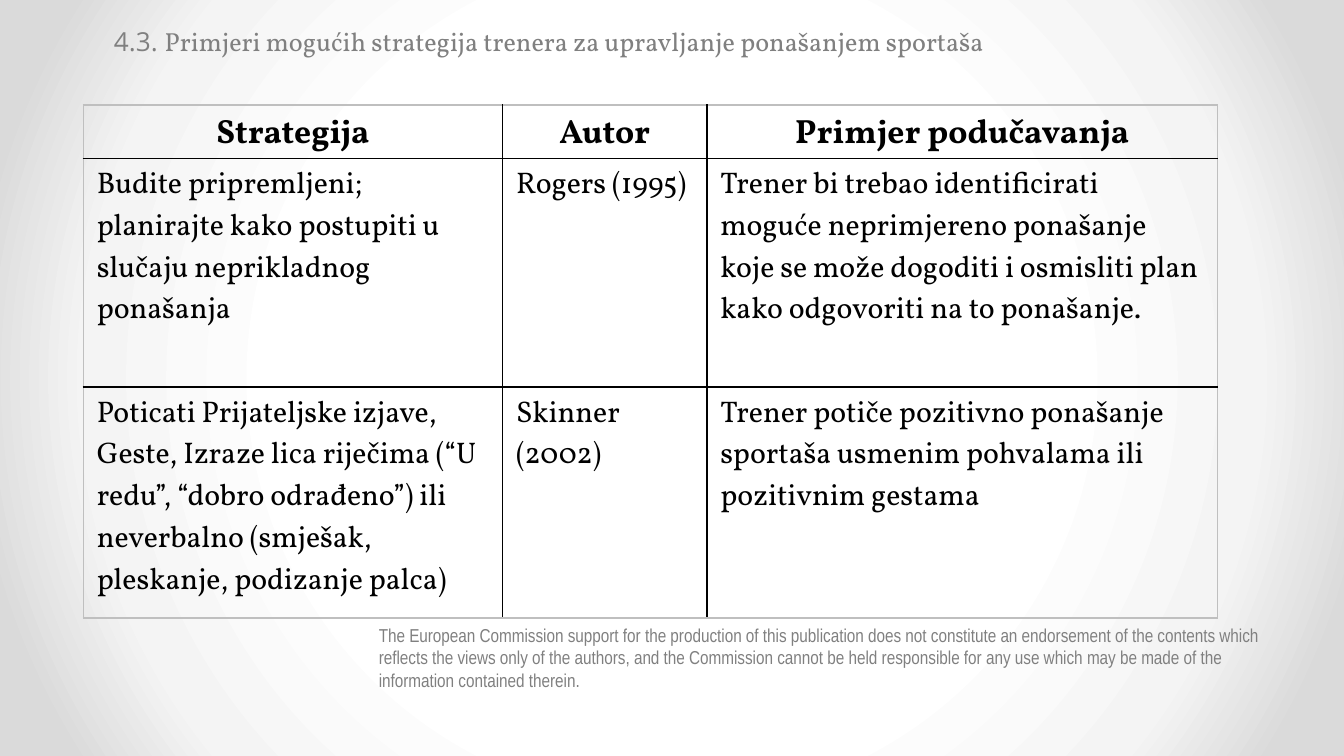
from lxml import etree
from pptx import Presentation
from pptx.dml.color import RGBColor
from pptx.enum.text import PP_ALIGN
from pptx.oxml import parse_xml
from pptx.oxml.ns import qn
from pptx.util import Inches, Pt

CENTER, LEFT = PP_ALIGN.CENTER, PP_ALIGN.LEFT
BLACK, GRAY, FRAME = "000000", "808080", "BFBFBF"
SERIF = "Vollkorn"
NS = ('xmlns:a="http://schemas.openxmlformats.org/drawingml/2006/main" '
      'xmlns:p="http://schemas.openxmlformats.org/presentationml/2006/main"')


def add_run(p, text, color, **fmt):
    r = p.add_run()
    r.text = text
    r.font.color.rgb = RGBColor.from_string(color)
    for name, value in fmt.items():
        setattr(r.font, name, value)


def add_border(cell, side, color):
    """Draw one edge of a cell; side is L, R, T or B."""
    ln = etree.SubElement(cell._tc.get_or_add_tcPr(), qn(f"a:ln{side}"), w=str(Pt(1)))
    fill = etree.SubElement(ln, qn("a:solidFill"))
    etree.SubElement(fill, qn("a:srgbClr"), val=color)


prs = Presentation()
prs.slide_width = Inches(10)
prs.slide_height = Inches(10) * 9 // 16
s = prs.slides.add_slide(prs.slide_layouts[6])

# Background: white centre fading to gray
stops = "".join(f'<a:gs pos="{pos * 1000}"><a:srgbClr val="{color}"/></a:gs>'
                for pos, color in [(50, "FFFFFF"), (76, "F4F4F4"), (92, "DADADA")])
bg = parse_xml(
    f'<p:bg {NS}><p:bgPr><a:gradFill rotWithShape="1"><a:gsLst>{stops}</a:gsLst>'
    '<a:path path="circle"><a:fillToRect l="50000" t="50000" r="50000" b="50000"/></a:path>'
    '</a:gradFill><a:effectLst/></p:bgPr></p:bg>')
s.shapes._spTree.addprevious(bg)

# Disclaimer
tf = s.shapes.add_textbox(Inches(2.72), Inches(4.59), Inches(6.93), Inches(0.67)).text_frame
tf.word_wrap = True
add_run(tf.paragraphs[0],
        "The European Commission support for the production of this publication does not "
        "constitute an endorsement of the contents which reflects the views only of the authors, "
        "and the Commission cannot be held responsible for any use which may be made of the "
        "information contained therein.",
        GRAY, size=Pt(10), name="Arial Narrow")

# Strategy table
rows = [
    ("Strategija", "Autor", "Primjer podučavanja"),
    ("Budite pripremljeni; planirajte kako postupiti u slučaju neprikladnog ponašanja",
     "Rogers (1995)",
     "Trener bi trebao identificirati moguće neprimjereno ponašanje koje se može dogoditi "
     "i osmisliti plan kako odgovoriti na to ponašanje."),
    ("Poticati Prijateljske izjave, Geste, Izraze lica riječima (“U redu”, “dobro odrađeno”) "
     "ili neverbalno (smješak, pleskanje, podizanje palca)",
     "Skinner (2002)",
     "Trener potiče pozitivno ponašanje sportaša usmenim pohvalama ili pozitivnim gestama"),
]
col_widths = [3.12, 1.52, 3.8]
row_heights = [0.4, 1.7, 1.72]
table = s.shapes.add_table(len(rows), len(col_widths), Inches(0.62), Inches(0.78),
                           Inches(sum(col_widths)), Inches(sum(row_heights))).table
table.first_row = table.horz_banding = False
for column, width in zip(table.columns, col_widths):
    column.width = Inches(width)
for row, height in zip(table.rows, row_heights):
    row.height = Inches(height)

last_row, last_col = len(rows) - 1, len(col_widths) - 1
for i, texts in enumerate(rows):
    header = i == 0
    for j, text in enumerate(texts):
        cell = table.cell(i, j)
        cell.margin_bottom = 0
        p = cell.text_frame.paragraphs[0]
        p.alignment = CENTER if header else LEFT
        add_run(p, text, BLACK, size=Pt(18 if header else 16), name=SERIF, bold=header)
        outer = {"L": j == 0, "R": j == last_col, "T": i == 0, "B": i == last_row}
        for side, is_outer in outer.items():
            add_border(cell, side, FRAME if is_outer else BLACK)
        cell.fill.background()

# Title
tf = s.shapes.add_textbox(Inches(0.75), Inches(0.14), Inches(8.2), Inches(0.34)).text_frame
tf.word_wrap = True
p = tf.paragraphs[0]
pPr = p._p.get_or_add_pPr()
pPr.set("marL", str(Inches(0.5)))
pPr.set("indent", str(-Inches(0.5)))
add_run(p, "4.3. ", GRAY, size=Pt(14), name="Open Sans")
add_run(p, "Primjeri mogućih strategija trenera za upravljanje ponašanjem sportaša",
        GRAY, size=Pt(14), name=SERIF)

prs.save("out.pptx")
